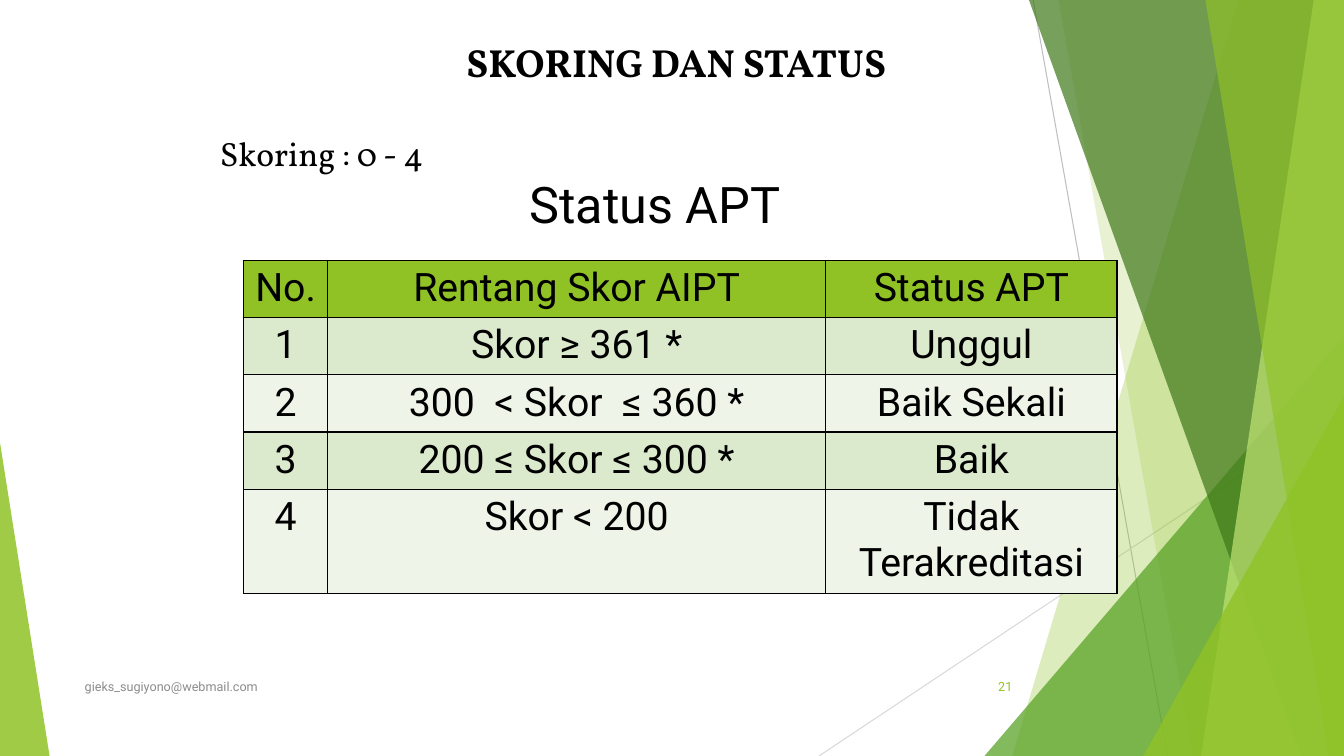
from dataclasses import dataclass

from lxml import etree
from pptx import Presentation
from pptx import util as u
from pptx.dml import color
from pptx.enum import shapes, text
from pptx.oxml import ns

COLUMNS, ROWS = 160, 90  # slide grid
CELL = u.Inches(1) / 12
GREEN, BLACK = "90C226", "000000"
LEFT, CENTER, RIGHT = text.PP_ALIGN.LEFT, text.PP_ALIGN.CENTER, text.PP_ALIGN.RIGHT
TOP, MIDDLE = text.MSO_ANCHOR.TOP, text.MSO_ANCHOR.MIDDLE

SCORES = [
    ("No.", "Rentang Skor AIPT", "Status APT"),
    ("1", "Skor ≥ 361 *", "Unggul"),
    ("2", "300  < Skor  ≤ 360 *", "Baik Sekali"),
    ("3", "200 ≤ Skor ≤ 300 *", "Baik"),
    ("4", "Skor < 200", "Tidak Terakreditasi"),
]


def grid(cells):
    """Turn a number of grid cells into a length."""
    return u.Emu(round(cells * CELL))


@dataclass
class Box:
    left: float
    top: float
    width: float
    height: float

    def inner(self, left, top, width, height):
        return Box(self.left + left, self.top + top, width, height)

    def point(self, x, y):
        return grid(self.left + x), grid(self.top + y)

    def lengths(self):
        return [grid(n) for n in (self.left, self.top, self.width, self.height)]


def rgb(value):
    return color.RGBColor.from_string(value)


def paint(shape, fill, opacity):
    shape.shadow.inherit = False
    shape.line.fill.background()
    shape.fill.solid()
    shape.fill.fore_color.rgb = rgb(fill)
    solid_color = shape.fill._xPr.find(".//" + ns.qn("a:srgbClr"))
    etree.SubElement(solid_color, ns.qn("a:alpha"), val=str(opacity * 1000))


def add_line(slide, start, end, line_color):
    line = slide.shapes.add_connector(shapes.MSO_CONNECTOR.STRAIGHT, *start, *end)
    line.line.color.rgb = rgb(line_color)
    line.line.width = u.Pt(0.75)
    etree.SubElement(line._element.spPr, ns.qn("a:effectLst"))


def add_shard(slide, box, top_x, bottom_x, fill, opacity):
    """Fill the area right of a slanted edge running down the whole box."""
    builder = slide.shapes.build_freeform(*box.point(top_x, 0), scale=1.0)
    corners = [(box.width, 0), (box.width, box.height), (bottom_x, box.height)]
    builder.add_line_segments([box.point(*corner) for corner in corners], close=True)
    paint(builder.convert_to_shape(), fill, opacity)


def add_triangle(slide, box, apex, fill, opacity):
    triangle = slide.shapes.add_shape(
        shapes.MSO_SHAPE.ISOSCELES_TRIANGLE, *box.lengths())
    triangle.adjustments[0] = apex
    paint(triangle, fill, opacity)


def add_right_facets(slide, box):
    add_line(slide, box.point(26, 0), box.point(42, box.height), "BFBFBF")
    add_line(slide, box.point(box.width, 48.4), box.point(0.5, box.height), "D9D9D9")
    add_shard(slide, box, 50.4, 23.5, GREEN, 30)
    add_shard(slide, box, 29, 45, GREEN, 20)
    add_triangle(slide, box.inner(20.2, 40, 42.8, 50), 1, "54A021", 72)
    add_shard(slide, box, 25.5, 57.9, "3F7819", 70)
    add_shard(slide, box, 59.4, 46, "C0E474", 70)
    add_shard(slide, box, 46.5, 61.2, GREEN, 65)
    add_triangle(slide, box.inner(39.1, 47.2, 23.9, 42.8), 1, GREEN, 80)


def write(frame, words, size, font, ink, align, bold=False):
    paragraph = frame.paragraphs[0]
    paragraph.alignment = align
    run = paragraph.add_run()
    run.text = words
    run.font.size = u.Pt(size)
    run.font.name = font
    run.font.bold = bold
    run.font.color.rgb = rgb(ink)


def add_text(slide, box, words, size, font, ink=BLACK, align=LEFT, anchor=TOP,
             bold=False):
    frame = slide.shapes.add_textbox(*box.lengths()).text_frame
    frame.word_wrap = True
    frame.vertical_anchor = anchor
    write(frame, words, size, font, ink, align, bold)


def add_headings(slide, box):
    add_text(slide, box.inner(0, 0, 115, 6.8), "SKORING DAN STATUS", 28, "Vollkorn",
             align=CENTER, bold=True)
    add_text(slide, box.inner(2, 11.2, 112, 6), "Skoring : 0 - 4", 24, "Vollkorn")
    add_text(slide, box.inner(4, 16, 102, 9.6), "Status APT", 36, "Roboto",
             align=CENTER)


def add_borders(cell):
    properties = cell._tc.get_or_add_tcPr()
    for side in ("lnL", "lnR", "lnT", "lnB"):
        border = etree.SubElement(properties, ns.qn("a:" + side), w=str(u.Pt(1)))
        fill = etree.SubElement(border, ns.qn("a:solidFill"))
        etree.SubElement(fill, ns.qn("a:srgbClr"), val=BLACK)


def add_score_table(slide, box):
    table = slide.shapes.add_table(len(SCORES), 3, *box.lengths()).table
    for column, width in zip(table.columns, (10, 59.3, 34.7)):
        column.width = grid(width)
    line_row = 6.67
    for row in table.rows:
        row.height = grid(line_row)
    table.rows[len(SCORES) - 1].height = grid(box.height - line_row * (len(SCORES) - 1))
    for r, values in enumerate(SCORES):
        fill = GREEN if r == 0 else ("EEF4E8", "DBE9CD")[r % 2]
        for c, value in enumerate(values):
            cell = table.cell(r, c)
            add_borders(cell)
            cell.fill.solid()
            cell.fill.fore_color.rgb = rgb(fill)
            write(cell.text_frame, value, 28, "Roboto", BLACK, CENTER)


def add_footer(slide, box):
    add_text(slide, box.inner(0, 0, 82.7, box.height), "gieks_sugiyono@webmail.com",
             9, "Roboto", "8C8C8C", anchor=MIDDLE)
    add_text(slide, box.inner(box.width - 9, 0, 9, box.height), "21",
             9, "Roboto", GREEN, RIGHT, MIDDLE)


def main():
    presentation = Presentation()
    presentation.slide_width = grid(COLUMNS)
    presentation.slide_height = grid(ROWS)
    slide = presentation.slides.add_slide(presentation.slide_layouts[6])
    add_right_facets(slide, Box(97, 0, 63, ROWS))
    add_triangle(slide, Box(0, 52.7, 5.9, 37.3), 0, GREEN, 85)
    add_headings(slide, Box(23, 4, 115, 25.6))
    add_score_table(slide, Box(29, 31, 104, 38.8))
    add_footer(slide, Box(8.9, 79.3, 112.8, 4.8))
    presentation.save("out.pptx")


if __name__ == "__main__":
    main()
